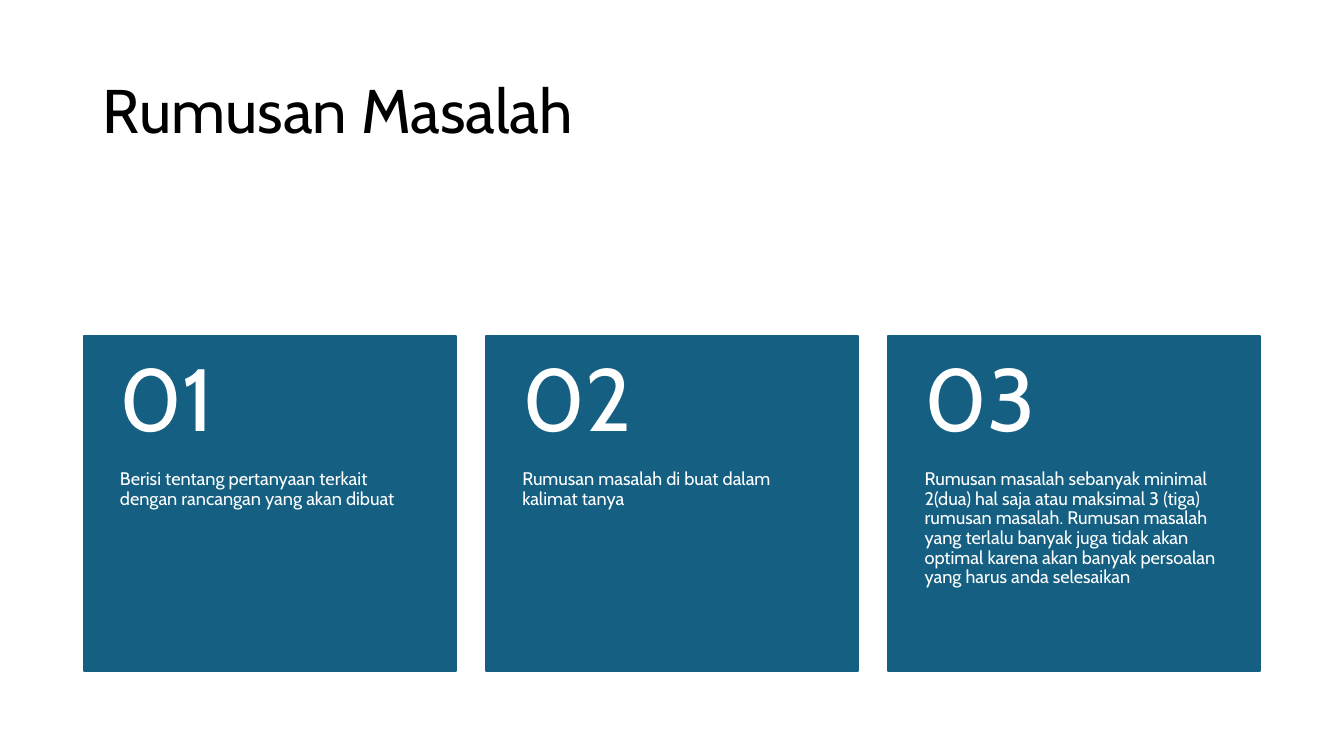
import pptx
import pptx.util
import pptx.dml.color
import pptx.enum.shapes
import pptx.enum.text

Inches = pptx.util.Inches
RGBColor = pptx.dml.color.RGBColor
Anchor = pptx.enum.text.MSO_ANCHOR

BLACK = RGBColor(0x00, 0x00, 0x00)
WHITE = RGBColor(0xFF, 0xFF, 0xFF)
TEAL = RGBColor(0x15, 0x60, 0x82)

CARD_LEFT, CARD_TOP = 0.83, 3.33
CARD_WIDTH, CARD_HEIGHT = 3.69, 3.33
CARD_STEP = 3.99
NUMBER_HEIGHT = 1.33

QUESTIONS = [
    "Berisi tentang pertanyaan terkait dengan rancangan yang akan dibuat",
    "Rumusan masalah di buat dalam kalimat tanya",
    "Rumusan masalah sebanyak minimal 2(dua) hal saja atau maksimal 3 (tiga) "
    "rumusan masalah. Rumusan masalah yang terlalu banyak juga tidak akan "
    "optimal karena akan banyak persoalan yang harus anda selesaikan",
]


class SlideBuilder:
    font_name = "Cabin"
    line_spacing = 0.9

    def __init__(self, slide):
        self.slide = slide

    def text(self, shapes, wording, box, size, color, anchor, insets):
        label = shapes.add_textbox(*map(Inches, box))
        left, top, right, bottom = map(Inches, insets)
        frame_format = {
            "word_wrap": True,
            "vertical_anchor": anchor,
            "margin_left": left,
            "margin_top": top,
            "margin_right": right,
            "margin_bottom": bottom,
        }
        for name, value in frame_format.items():
            setattr(label.text_frame, name, value)
        paragraph = label.text_frame.paragraphs[0]
        paragraph.line_spacing = self.line_spacing
        run = paragraph.add_run()
        run.text = wording
        font_format = {"name": self.font_name, "size": pptx.util.Pt(size)}
        for name, value in font_format.items():
            setattr(run.font, name, value)
        run.font.color.rgb = color

    def panel(self, shapes, box):
        panel = shapes.add_shape(
            pptx.enum.shapes.MSO_SHAPE.RECTANGLE, *map(Inches, box))
        panel.shadow.inherit = False
        panel.fill.solid()
        panel.fill.fore_color.rgb = TEAL
        panel.line.color.rgb = TEAL
        panel.line.width = pptx.util.Pt(1.5)

    def title(self, wording):
        self.text(self.slide.shapes, wording, (0.92, 0.4, 11.5, 1.45), 44,
                  BLACK, Anchor.MIDDLE, (0.1, 0.05, 0.1, 0.05))

    def card(self, shapes, index, question):
        left = CARD_LEFT + index * CARD_STEP
        self.panel(shapes, (left, CARD_TOP, CARD_WIDTH, CARD_HEIGHT))
        self.text(shapes, question,
                  (left, CARD_TOP + NUMBER_HEIGHT, CARD_WIDTH,
                   CARD_HEIGHT - NUMBER_HEIGHT),
                  13, WHITE, Anchor.TOP, (0.36, 0, 0.36, 0.36))
        self.text(shapes, f"{index + 1:02d}",
                  (left, CARD_TOP, CARD_WIDTH, NUMBER_HEIGHT),
                  63, WHITE, Anchor.MIDDLE, (0.36, 0.18, 0.36, 0.18))

    def cards(self, questions):
        group = self.slide.shapes.add_group_shape()
        for index, question in enumerate(questions):
            self.card(group.shapes, index, question)


def main():
    presentation = pptx.Presentation()
    presentation.slide_width = Inches(13.33)
    presentation.slide_height = Inches(7.5)
    builder = SlideBuilder(
        presentation.slides.add_slide(presentation.slide_layouts[6]))
    builder.title("Rumusan Masalah")
    builder.cards(QUESTIONS)
    presentation.save("out.pptx")


if __name__ == "__main__":
    main()
